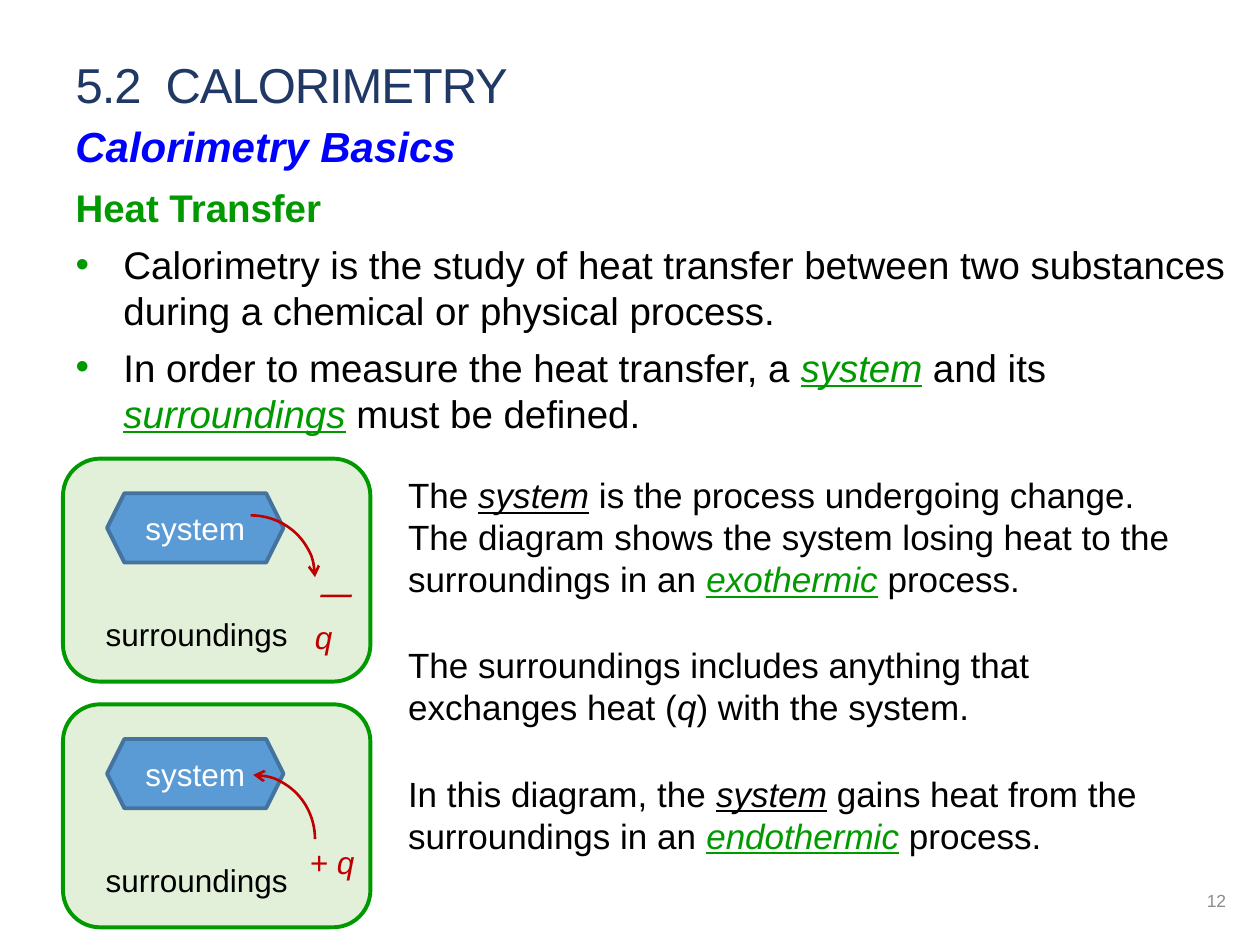
from lxml import etree
from pptx import Presentation
from pptx.dml.color import RGBColor
from pptx.enum.shapes import MSO_SHAPE
from pptx.enum.text import MSO_ANCHOR, MSO_AUTO_SIZE, PP_ALIGN
from pptx.oxml.ns import qn
from pptx.util import Inches, Pt

COLORS = {
    "title": "203864", "topic": "0000FF", "green": "009900", "black": "000000",
    "white": "FFFFFF", "grey": "8C8C8C", "red": "C00000", "meadow": "E2F0D9",
    "blue": "5B9BD5", "steel": "43739E",
}
ROUNDED, HEXAGON, ARC = MSO_SHAPE.ROUNDED_RECTANGLE, MSO_SHAPE.HEXAGON, MSO_SHAPE.ARC
LEFT, CENTER, RIGHT = PP_ALIGN.LEFT, PP_ALIGN.CENTER, PP_ALIGN.RIGHT
TOP, MIDDLE, BOTTOM = MSO_ANCHOR.TOP, MSO_ANCHOR.MIDDLE, MSO_ANCHOR.BOTTOM
NO_AUTOFIT = MSO_AUTO_SIZE.NONE
COLUMNS, ROWS = 100, 75
UNIT = Inches(10) // COLUMNS
TERM = {"italic": True, "underline": True}
KEY_TERM = {**TERM, "color": "green"}


def on_grid(*cells):
    """Turn grid columns and rows into lengths."""
    return [round(cell * UNIT) for cell in cells]


def within(box, left, top, width, height):
    """Offset a part by the corner of the box that holds it."""
    return box[0] + left, box[1] + top, width, height


def rgb(name):
    """Look up a palette colour."""
    return RGBColor.from_string(COLORS[name])


def add_run(paragraph, text, size=20, color="black", bold=False, italic=False,
            underline=False, spacing=None):
    """Append formatted text to a paragraph."""
    run = paragraph.add_run()
    run.text = text
    font = run.font
    font.name, font.size = "Arial", Pt(size)
    font.bold, font.italic, font.underline = bold, italic, underline
    font.color.rgb = rgb(color)
    if spacing is not None:
        run._r.get_or_add_rPr().set("spc", str(spacing))


def write(holder, paragraphs, align=LEFT, anchor=TOP, wrap=True, **base):
    """Fill a shape with paragraphs made of (text, format) pieces."""
    frame = holder.text_frame
    frame.auto_size, frame.word_wrap, frame.vertical_anchor = NO_AUTOFIT, wrap, anchor
    for index, pieces in enumerate(paragraphs):
        paragraph = frame.add_paragraph() if index else frame.paragraphs[0]
        paragraph.alignment = align
        for text, style in pieces:
            add_run(paragraph, text, **{**base, **style})
    return frame


def position(holder, box):
    """Move a placeholder to a grid box."""
    holder.left, holder.top, holder.width, holder.height = on_grid(*box)


def add_label(shapes, box, *paragraphs, **layout):
    """Add a text box on the grid."""
    return write(shapes.add_textbox(*on_grid(*box)), paragraphs, **layout)


def add_figure(shapes, kind, box, line, weight, fill=None):
    """Add a preset shape with a flat outline and fill."""
    figure = shapes.add_shape(kind, *on_grid(*box))
    figure.shadow.inherit = False
    figure.line.color.rgb, figure.line.width = rgb(line), Pt(weight)
    if fill:
        figure.fill.solid()
        figure.fill.fore_color.rgb = rgb(fill)
    else:
        figure.fill.background()
    return figure


def set_bullet(paragraph, bulleted):
    """Give a list paragraph a green hanging bullet, or none."""
    properties = paragraph._p.get_or_add_pPr()
    indent = Inches(0.38) if bulleted else 0
    properties.set("marL", str(indent))
    properties.set("indent", str(-indent))
    if bulleted:
        color = etree.SubElement(properties, qn("a:buClr"))
        etree.SubElement(color, qn("a:srgbClr"), val=COLORS["green"])
        etree.SubElement(properties, qn("a:buFont"), typeface="Arial")
        etree.SubElement(properties, qn("a:buChar"), char="•")
    else:
        etree.SubElement(properties, qn("a:buNone"))


def add_heading(slide, box):
    """Place the section title and the topic under it."""
    position(slide.shapes.title, box)
    write(slide.shapes.title, [[("5.2  CALORIMETRY", {})]], anchor=BOTTOM,
          size=28, color="title", spacing=-60)
    add_label(slide.shapes, within(box, 0, 5.3, 32.5, 5), [("Calorimetry Basics", {})],
              wrap=False, size=24, color="topic", bold=True, italic=True)


def add_key_points(slide, box):
    """Place the subheading and its bulleted points."""
    body = slide.placeholders[1]
    position(body, box)
    frame = write(body, [
        [("Heat Transfer", {"bold": True, "color": "green"})],
        [("Calorimetry is the study of heat transfer between two substances "
          "during a chemical or physical process.", {})],
        [("In order to measure the heat transfer, a ", {}), ("system", KEY_TERM),
         (" and its ", {}), ("surroundings", KEY_TERM), (" must be defined.", {})],
    ], size=22)
    for index, paragraph in enumerate(frame.paragraphs):
        paragraph.space_before, paragraph.space_after = Pt(0), Pt(6)
        set_bullet(paragraph, index > 0)


def add_heat_diagram(slide, box, heat, heat_box, arc_box, gains_heat):
    """Draw a system in its surroundings with the heat flow between them."""
    parts = slide.shapes.add_group_shape().shapes
    add_figure(parts, ROUNDED, box, "green", 2.25, "meadow")
    system = add_figure(parts, HEXAGON, within(box, 3.5, 2.75, 14, 5.5),
                        "steel", 2.25, "blue")
    write(system, [[("system", {})]], align=CENTER, anchor=MIDDLE, size=18, color="white")
    add_label(parts, within(box, 2.4, 11.95, 16.6, 4), [("surroundings", {})],
              wrap=False, size=18)
    flow = add_figure(parts, ARC, within(box, *arc_box), "red", 1.5)
    etree.SubElement(flow.line._get_or_add_ln(), qn("a:tailEnd"), type="arrow")
    if gains_heat:
        flow.rotation = 270
        flow._element.spPr.find(qn("a:xfrm")).set("flipV", "1")
    add_label(parts, within(box, *heat_box), [(heat, {})],
              wrap=not gains_heat, size=18, color="red", italic=True)


def add_explanations(slide, box):
    """Place the three explanations beside the diagrams."""
    add_label(
        slide.shapes, within(box, 0, 0, 66.4, 11.1),
        [("The ", {}), ("system", TERM), (" is the process undergoing change.", {})],
        [("The diagram shows the system losing heat to the surroundings in an ", {}),
         ("exothermic", KEY_TERM), (" process.", {})])
    add_label(
        slide.shapes, within(box, 0, 13.5, 58.8, 7.7),
        [("The surroundings includes anything that exchanges heat (", {}),
         ("q", {"italic": True}), (") with the system.", {})])
    add_label(
        slide.shapes, within(box, 0, 23.7, 66.4, 7.7),
        [("In this diagram, the ", {}), ("system", TERM),
         (" gains heat from the surroundings in an ", {}),
         ("endothermic", KEY_TERM), (" process.", {})])


def add_page_number(slide, box):
    """Place the page number."""
    add_label(slide.shapes, box, [("12", {})], align=RIGHT, anchor=MIDDLE,
              size=10, color="grey")


def main():
    """Build and save the calorimetry slide."""
    deck = Presentation()
    deck.slide_width, deck.slide_height = COLUMNS * UNIT, ROWS * UNIT
    slide = deck.slides.add_slide(deck.slide_layouts[1])
    add_heading(slide, (5, 3.8, 93.3, 5.7))
    add_key_points(slide, (5, 14.1, 95, 23.2))
    add_heat_diagram(slide, (5, 36.4, 24.4, 17.7), "⎻ q", (19, 9.2, 5.4, 4),
                     (9.8, 4.5, 10.2, 9.8), gains_heat=False)
    add_heat_diagram(slide, (5, 55.9, 24.4, 17.7), "+ q", (18.6, 10.5, 5.6, 4),
                     (10, 5.8, 10.2, 9.8), gains_heat=True)
    add_explanations(slide, (31.4, 37.1))
    add_page_number(slide, (75.8, 69.5, 22.5, 4))
    deck.save("out.pptx")


if __name__ == "__main__":
    main()
